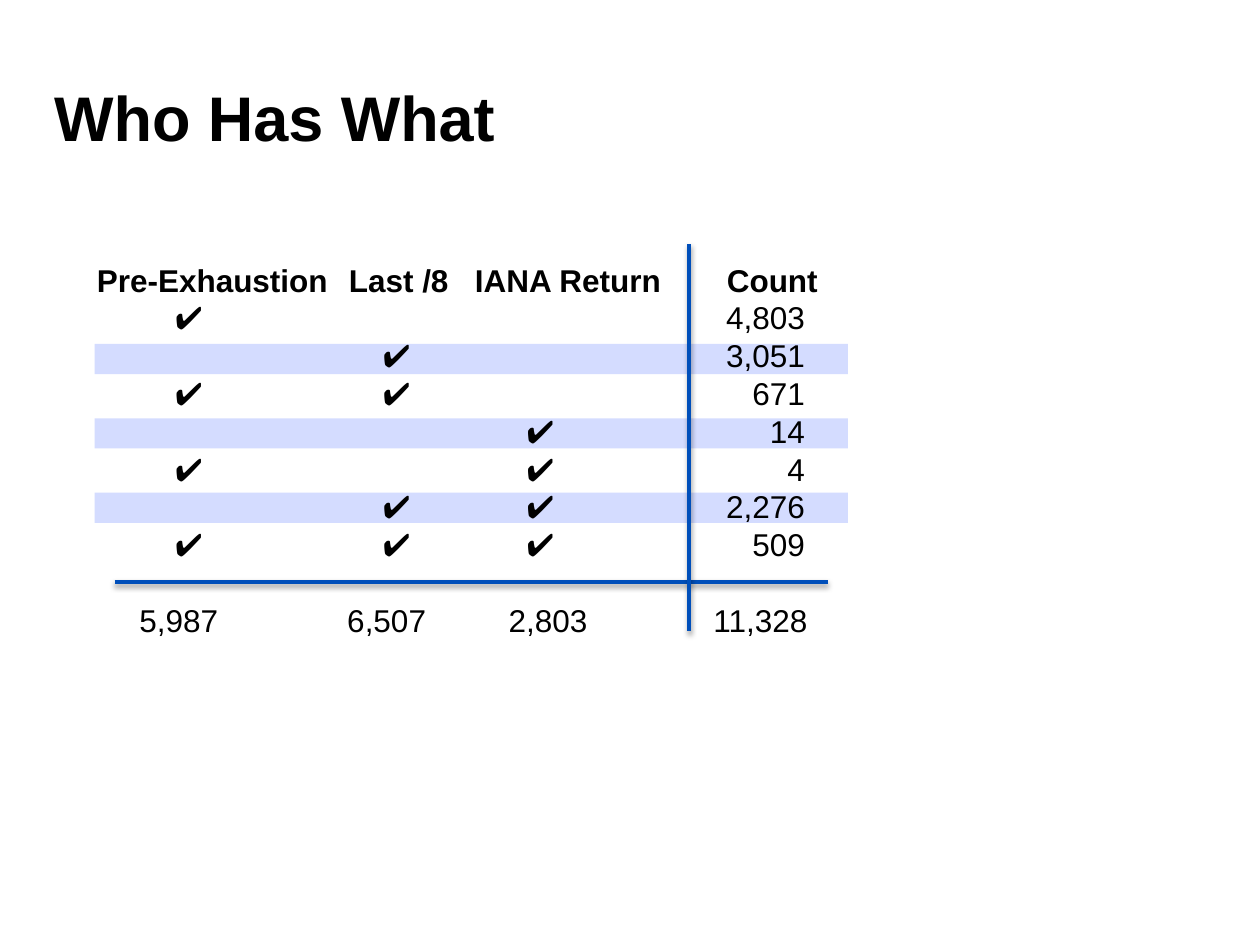
import dataclasses

import lxml.etree
import pptx
import pptx.dml.color
import pptx.enum.shapes
import pptx.enum.text
import pptx.oxml.ns
import pptx.util

Inches, Pt = pptx.util.Inches, pptx.util.Pt
qn = pptx.oxml.ns.qn

FONT, BLACK, BAND, RULE = "Arial", "000000", "D4DCFF", "004FBA"
TICK = "✔"
ROW_PITCH = Pt(21.6)

# Tab stops: inches from the text edge, with their alignment
HEADER_TABS = [(2, "l"), (3, "l"), (5, "l")]
TICK_TABS = [(0.73, "ctr"), (2.38, "ctr"), (3.52, "ctr"), (5.62, "r")]
TOTAL_TABS = [(0.65, "ctr"), (2.3, "ctr"), (3.58, "ctr"), (5.64, "r")]


@dataclasses.dataclass
class Holding:
    pre_exhaustion: bool
    last_8: bool
    iana_return: bool
    count: str

    def line(self) -> str:
        flags = (self.pre_exhaustion, self.last_8, self.iana_return)
        return "\t" + "\t".join([TICK if flag else "" for flag in flags] + [self.count])


@dataclasses.dataclass
class Rule:
    start: tuple[float, float]
    end: tuple[float, float]


HOLDINGS = [
    Holding(True, False, False, "4,803"),
    Holding(False, True, False, "3,051"),
    Holding(True, True, False, "671"),
    Holding(False, False, True, "14"),
    Holding(True, False, True, "4"),
    Holding(False, True, True, "2,276"),
    Holding(True, True, True, "509"),
]
RULES = [Rule((0.91, 4.62), (6.57, 4.62)), Rule((5.47, 1.94), (5.47, 5.01))]


def color(value: str) -> pptx.dml.color.RGBColor:
    return pptx.dml.color.RGBColor.from_string(value)


def format_runs(paragraph, size: float, bold: bool) -> None:
    for run in paragraph.runs:
        run.font.name, run.font.size, run.font.bold = FONT, Pt(size), bold
        run.font.color.rgb = color(BLACK)


def add_band(slide, top: float) -> None:
    band = slide.shapes.add_shape(
        pptx.enum.shapes.MSO_SHAPE.RECTANGLE,
        Inches(0.75), Inches(top), Inches(5.98), Inches(0.24))
    band.shadow.inherit = False
    band.fill.solid()
    band.fill.fore_color.rgb = color(BAND)
    band.line.fill.background()


def write_row(paragraph, text: str, tabs: list, bold: bool = False) -> None:
    tab_list = lxml.etree.SubElement(paragraph._p.get_or_add_pPr(), qn("a:tabLst"))
    for position, alignment in tabs:
        lxml.etree.SubElement(tab_list, qn("a:tab"),
                              pos=str(Inches(position)), algn=alignment)
    paragraph.line_spacing = ROW_PITCH
    paragraph.text = text
    format_runs(paragraph, 18, bold)


def add_rule(slide, rule: Rule) -> None:
    line = slide.shapes.add_connector(
        pptx.enum.shapes.MSO_CONNECTOR.STRAIGHT,
        *map(Inches, rule.start), *map(Inches, rule.end))
    line.line.color.rgb = color(RULE)
    line.line.width = Pt(2)
    # Soft shadow straight below the line
    effects = lxml.etree.SubElement(line._element.spPr, qn("a:effectLst"))
    shadow = lxml.etree.SubElement(
        effects, qn("a:outerShdw"), blurRad=str(Pt(3.1)), dist=str(Pt(1.6)),
        dir="5400000", rotWithShape="0")
    shade = lxml.etree.SubElement(shadow, qn("a:srgbClr"), val=BLACK)
    lxml.etree.SubElement(shade, qn("a:alpha"), val="38000")


def main() -> None:
    deck = pptx.Presentation()
    deck.slide_width, deck.slide_height = Inches(10), Inches(7.5)
    slide = deck.slides.add_slide(deck.slide_layouts[5])

    # Title
    title = slide.shapes.title
    title.left, title.top = Inches(0.43), Inches(0.3)
    title.width, title.height = Inches(9.13), Inches(1.25)
    frame = title.text_frame
    frame.text = "Who Has What"
    frame.auto_size = pptx.enum.text.MSO_AUTO_SIZE.NONE
    frame.vertical_anchor = pptx.enum.text.MSO_ANCHOR.MIDDLE
    frame.margin_left = frame.margin_right = frame.margin_top = frame.margin_bottom = 0
    frame.paragraphs[0].alignment = pptx.enum.text.PP_ALIGN.LEFT
    format_runs(frame.paragraphs[0], 36, True)

    # Bands behind every second row
    for index in range(3):
        add_band(slide, 2.73 + 0.59 * index)

    # Tabbed rows: header, holdings, totals
    rows = slide.shapes.add_textbox(
        Inches(0.67), Inches(2.02), Inches(8.82), Inches(3.13)).text_frame
    rows.word_wrap = True
    write_row(rows.paragraphs[0], "Pre-Exhaustion\tLast /8\tIANA Return\tCount",
              HEADER_TABS, bold=True)
    for holding in HOLDINGS:
        write_row(rows.add_paragraph(), holding.line(), TICK_TABS)
    totals = rows.add_paragraph()
    write_row(totals, "\t5,987\t6,507\t2,803\t11,328", TOTAL_TABS)
    totals.space_before = ROW_PITCH

    # Rules that set off the totals and the counts
    for rule in RULES:
        add_rule(slide, rule)

    deck.save("out.pptx")


if __name__ == "__main__":
    main()
